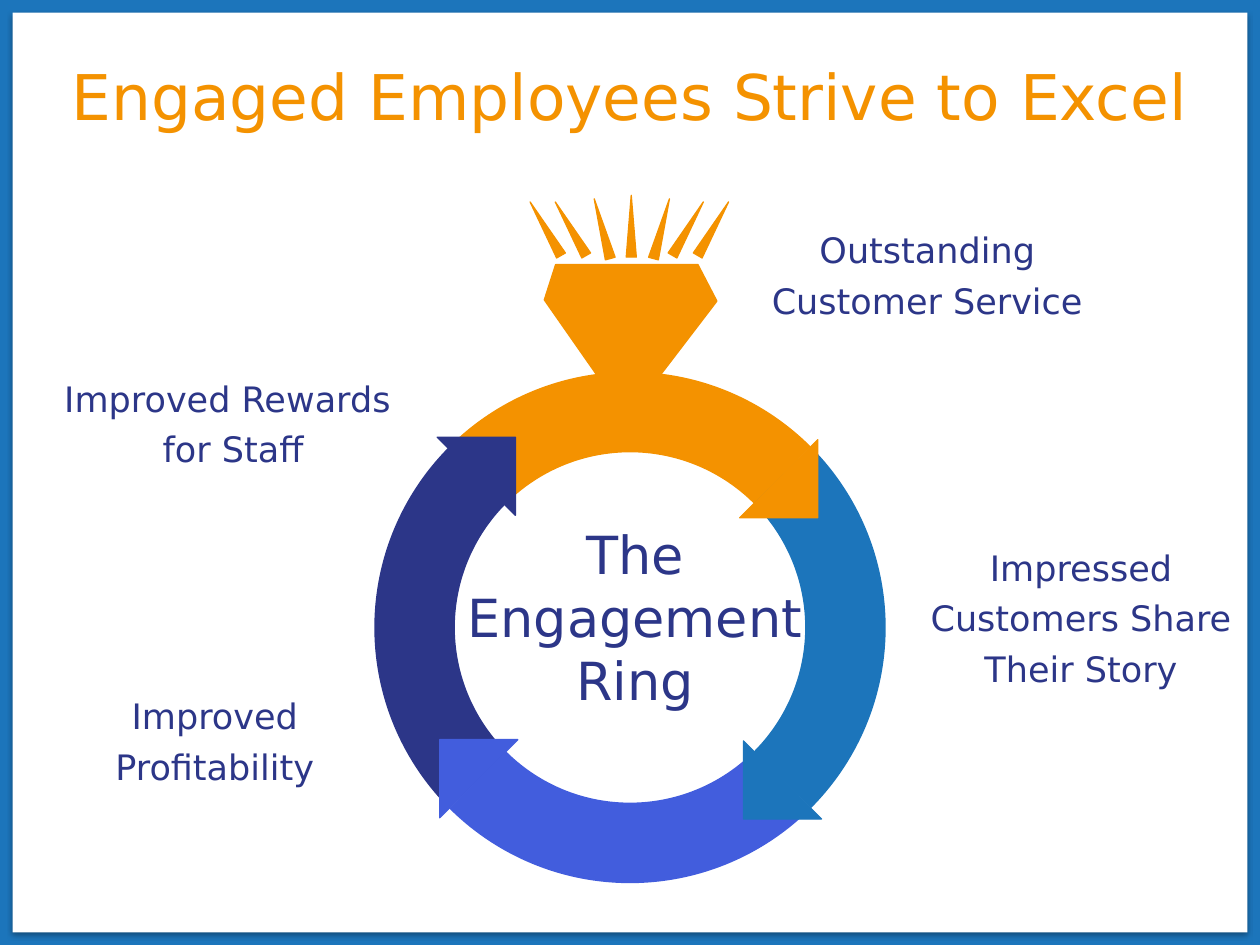
from lxml import etree
from pptx import Presentation
from pptx.dml.color import RGBColor
from pptx.enum import shapes, text
from pptx.oxml import parse_xml
from pptx.util import Inches, Pt

COLS, ROWS = 100, 75
CELL = Inches(10) / COLS
FONT = "DejaVu Sans"
COLORS = {"orange": "F49200", "navy": "2C3688", "violet": "425DDD",
          "blue": "1C75BB", "white": "FFFFFF"}
SHADOW = ('<a:effectLst xmlns:a="http://schemas.openxmlformats.org/drawingml/2006/main">'
          '<a:outerShdw blurRad="39370" dist="22860" dir="5400000" rotWithShape="0">'
          '<a:srgbClr val="000000"><a:alpha val="35000"/></a:srgbClr>'
          '</a:outerShdw></a:effectLst>')

RING = (32.9, 32.7, 34.2, 34.2)
# Colour, rotation of arc, centre of arrowhead, rotation of arrowhead
SEGMENTS = [("orange", 315, (61.8, 38), 270), ("navy", 225, (37.8, 37.8), 180),
            ("violet", 135, (38, 61.8), 90), ("blue", 45, (62.1, 61.9), 0)]
HEAD = 6.2
RAYS = [(43.3, 330), (45.3, 330), (47.8, 345), (50.1, 0),
        (52.5, 15), (54.6, 30), (56.6, 30)]
GEM = [(44.1, 21), (55.4, 21), (56.9, 23.9), (51.4, 31.1), (48.3, 31.1), (43.2, 23.8)]
LABELS = [((2.8, 28.8, 31.4, 9.1), ["Improved Rewards ", "for Staff"]),
          ((71.6, 42.2, 28.4, 13.1), ["Impressed Customers Share Their Story"]),
          ((3.5, 54, 27.1, 8.7), ["Improved Profitability"]),
          ((59.4, 17, 28.4, 8.7), ["Outstanding Customer Service"])]


def grid(*cells):
    """Turn grid cells into slide lengths."""
    return [round(c * CELL) for c in cells]


def rgb(name):
    """Look up a named colour."""
    return RGBColor.from_string(COLORS[name])


def paint(sp, color, line=0.75, filled=True):
    """Give a shape one colour for fill and line, and no shadow."""
    sp.shadow.inherit = False
    if filled:
        sp.fill.solid()
        sp.fill.fore_color.rgb = rgb(color)
    else:
        sp.fill.background()
    if line:
        sp.line.color.rgb = rgb(color)
        sp.line.width = Pt(line)
    else:
        sp.line.fill.background()


def add_preset(s, kind, box, color, rotation=0, **style):
    """Add a painted preset shape."""
    sp = s.shapes.add_shape(kind, *grid(*box))
    sp.rotation = rotation
    paint(sp, color, **style)
    return sp


def add_panel(s):
    """Add the white panel with its soft shadow."""
    sp = add_preset(s, shapes.MSO_SHAPE.RECTANGLE, (1, 1, COLS - 2, ROWS - 2),
                    "white", line=0)
    pr = sp._element.spPr
    pr.replace(pr.find("{*}effectLst"), parse_xml(etree.fromstring(SHADOW) is not None and SHADOW))


def add_text(s, box, lines, size, color, middle=False, spacing=None):
    """Add centred text that wraps in its box."""
    tf = s.shapes.add_textbox(*grid(*box)).text_frame
    tf.word_wrap = True
    tf.vertical_anchor = text.MSO_ANCHOR.MIDDLE if middle else text.MSO_ANCHOR.TOP
    tf.text = "\n".join(lines)
    for p in tf.paragraphs:
        p.alignment = text.PP_ALIGN.CENTER
        p.line_spacing = spacing
        for r in p.runs:
            r.font.name, r.font.size = FONT, Pt(size)
            r.font.color.rgb = rgb(color)


def add_ring(s):
    """Add the four arcs and then their arrowheads."""
    for color, turn, _, _ in SEGMENTS:
        add_preset(s, shapes.MSO_SHAPE.ARC, RING, color, turn, line=46, filled=False)
    for color, _, (x, y), turn in reversed(SEGMENTS):
        box = (x - HEAD / 2, y - HEAD / 2, HEAD, HEAD)
        add_preset(s, shapes.MSO_SHAPE.RIGHT_TRIANGLE, box, color, turn)


def add_gem(s):
    """Add the gem and the rays above it."""
    points = [grid(*pt) for pt in GEM]
    fb = s.shapes.build_freeform(*points[0])
    fb.add_line_segments(points[1:], close=True)
    paint(fb.convert_to_shape(), "orange")
    for x, turn in RAYS:
        top = 15.7 if turn else 15.5
        add_preset(s, shapes.MSO_SHAPE.ISOSCELES_TRIANGLE,
                   (x - 0.4, top, 0.8, 4.9), "orange", turn)


def main():
    """Build and save the slide."""
    prs = Presentation()
    prs.slide_width, prs.slide_height = grid(COLS, ROWS)
    s = prs.slides.add_slide(prs.slide_layouts[6])
    s.background.fill.solid()
    s.background.fill.fore_color.rgb = rgb("blue")
    add_panel(s)
    add_text(s, (1.2, 2.1, 97.6, 10.9), ["Engaged Employees Strive to Excel"],
             36, "orange", middle=True)
    add_ring(s)
    add_gem(s)
    add_text(s, (31.9, 32, 37, 33.9), ["The Engagement Ring"], 30, "navy", middle=True)
    for box, lines in LABELS:
        add_text(s, box, lines, 20, "navy", spacing=1.2)
    prs.save("out.pptx")


if __name__ == "__main__":
    main()
